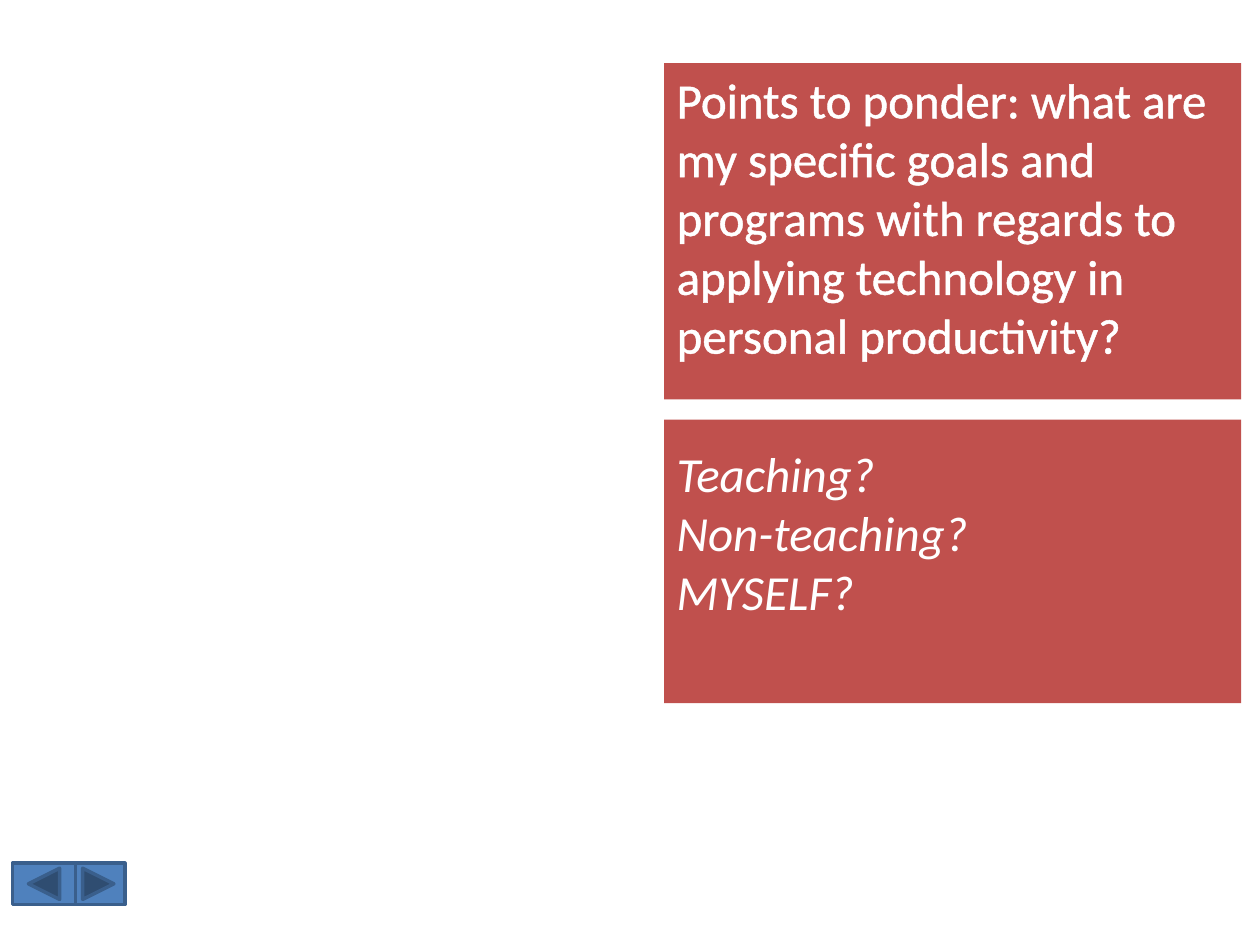
from lxml import etree
from pptx import Presentation
from pptx.dml.color import RGBColor
from pptx.enum.shapes import MSO_SHAPE
from pptx.enum.text import MSO_ANCHOR, MSO_AUTO_SIZE, PP_ALIGN
from pptx.oxml import parse_xml
from pptx.oxml.ns import nsdecls, qn
from pptx.util import Inches, Pt


def paint(fill, color):
    fill.solid()
    fill.fore_color.rgb = RGBColor.from_string(color)


presentation = Presentation()
presentation.slide_width = Inches(10)
presentation.slide_height = Inches(7.5)
slide = presentation.slides.add_slide(presentation.slide_layouts[1])
question, answers = slide.placeholders

panels = [
    (question, 0.5, 2.67, MSO_ANCHOR.TOP, False,
     ["Points to ponder: what are my specific goals and programs with regards "
      "to applying technology in personal productivity?"]),
    (answers, 3.33, 2.25, MSO_ANCHOR.MIDDLE, True,
     ["Teaching?", "Non-teaching?", "MYSELF?"]),
]
for panel, top, height, anchor, italic, lines in panels:
    panel.left, panel.top = Inches(5.27), Inches(top)
    panel.width, panel.height = Inches(4.58), Inches(height)
    paint(panel.fill, "C0504D")
    frame = panel.text_frame
    frame.text = "\n".join(lines)
    frame.word_wrap = True
    frame.auto_size = MSO_AUTO_SIZE.NONE
    frame.vertical_anchor = anchor
    for paragraph in frame.paragraphs:
        properties = paragraph._p.get_or_add_pPr()
        properties.set("marL", "0")
        properties.set("indent", "0")
        etree.SubElement(properties, qn("a:buNone"))
        paragraph.alignment = PP_ALIGN.LEFT
        paragraph.space_before = Pt(0)
        paragraph.font.name = "Calibri"
        paragraph.font.size = Pt(28)
        paragraph.font.italic = italic
        paint(paragraph.font.fill, "FFFFFF")

# The answers sit one half line above the middle of their panel
answers.text_frame.margin_bottom = Inches(0.52)

# The question has a thin white outline around its letters
run = question.text_frame.paragraphs[0].runs[0]
paint(run.font.fill, "FFFFFF")
run.font._element.insert(0, parse_xml(
    f'<a:ln {nsdecls("a")} w="18415"><a:solidFill>'
    '<a:srgbClr val="FFFFFF"/></a:solidFill></a:ln>'))

for button_type, left, width in [
    (MSO_SHAPE.ACTION_BUTTON_FORWARD_OR_NEXT, 0.57, 0.42),
    (MSO_SHAPE.ACTION_BUTTON_BACK_OR_PREVIOUS, 0.1, 0.5),
]:
    button = slide.shapes.add_shape(
        button_type, Inches(left), Inches(6.85), Inches(width), Inches(0.33))
    button.shadow.inherit = False
    paint(button.fill, "4F81BD")
    paint(button.line.fill, "3A5F8C")
    button.line.width = Pt(2)

presentation.save("out.pptx")
